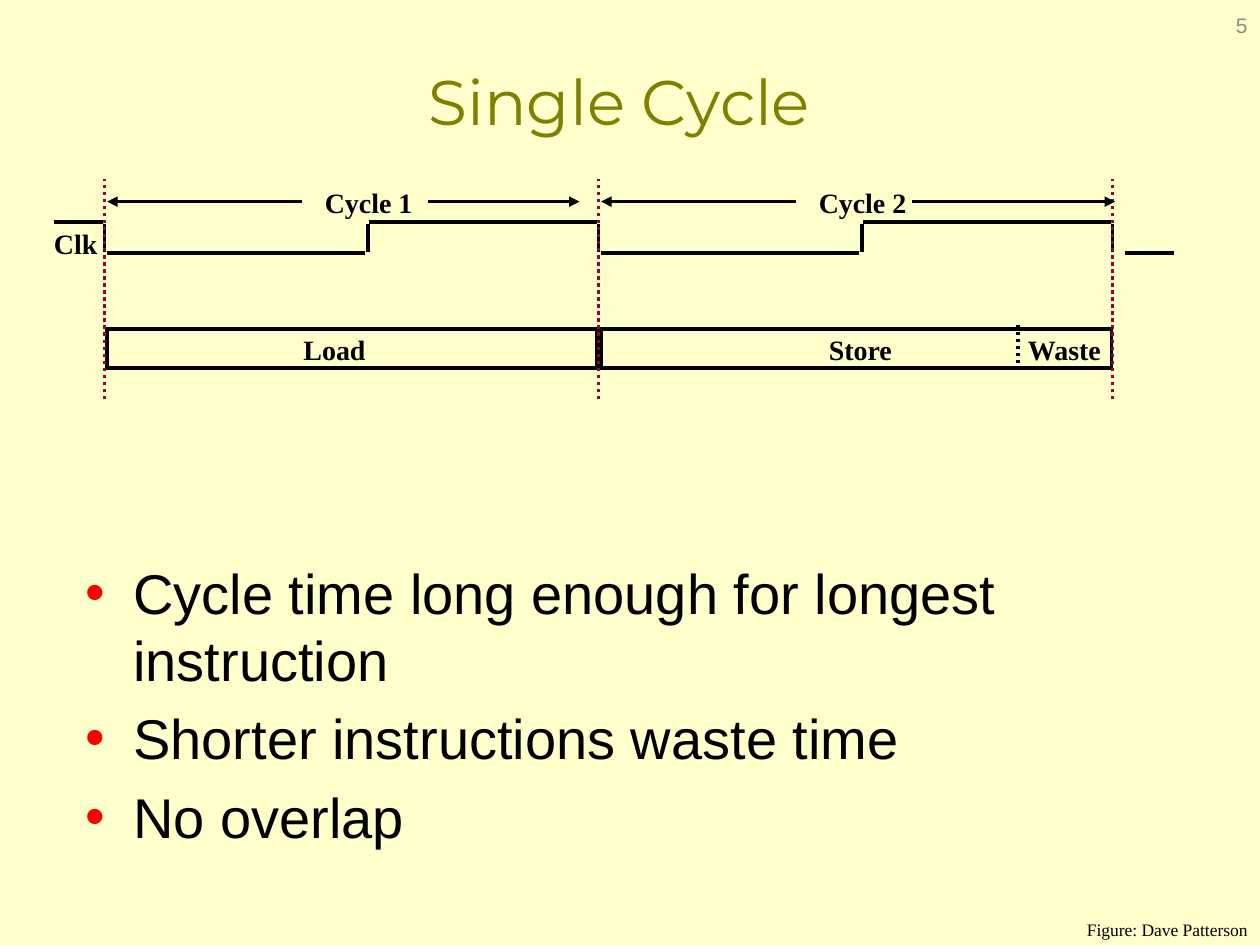
from lxml.etree import SubElement
from pptx import Presentation
from pptx.dml.color import RGBColor
from pptx.enum.dml import MSO_LINE_DASH_STYLE as Dash
from pptx.enum.shapes import MSO_CONNECTOR as Connector, MSO_SHAPE as Shape
from pptx.enum.text import MSO_ANCHOR as Anchor, MSO_AUTO_SIZE as AutoSize, PP_ALIGN as Align
from pptx.oxml.ns import qn
from pptx.util import Inches, Pt

CREAM = RGBColor(0xFF, 0xFF, 0xCC)
OLIVE = RGBColor(0x80, 0x80, 0x00)
MAROON = RGBColor(0x99, 0x00, 0x33)
BLACK = RGBColor(0, 0, 0)
GRAY = RGBColor(0x8C, 0x8C, 0x8C)

EDGES = (0.83, 4.75, 8.83)
HALF = 2.09
GAP = 0.02
ROWS = {"top": 1.42, "arrow": 1.6, "high": 1.76, "low": 2.01, "bar": 2.61, "foot": 3.17}
BAR_HEIGHT = 0.31
LABEL = {"size": Pt(16), "name": "Times New Roman", "bold": True}
POINTS = (
    "Cycle time long enough for longest instruction",
    "Shorter instructions waste time",
    "No overlap",
)


def apply_format(target, values):
    """Set every named attribute on the target."""
    for name, value in values.items():
        setattr(target, name, value)


def write(para, text, color, font):
    """Add one formatted span to a paragraph."""
    span = para.add_run()
    span.text = text
    apply_format(span.font, font)
    span.font.color.rgb = color


def add_text(page, area, text, font, color=BLACK, wrap=False, **layout):
    """Add a text box with one formatted paragraph."""
    box = page.shapes.add_textbox(*map(Inches, area))
    box.text_frame.word_wrap = wrap
    para = box.text_frame.paragraphs[0]
    apply_format(para, layout)
    write(para, text, color, font)


def add_label(page, left, top, width, text):
    """Add a bold diagram label."""
    add_text(page, (left, top, width, 0.36), text, LABEL)


def add_line(page, start, end, color=BLACK, dotted=False, head=False):
    """Draw a straight line, optionally dotted or with an arrowhead at its start."""
    line = page.shapes.add_connector(Connector.STRAIGHT, *map(Inches, start + end))
    line.line.color.rgb = color
    line.line.width = Pt(2)
    if dotted:
        line.line.dash_style = Dash.ROUND_DOT
    if head:
        SubElement(line.line._get_or_add_ln(), qn("a:headEnd"), type="triangle")
    SubElement(line._element.spPr, qn("a:effectLst"))


def add_clock(page):
    """Draw the clock wave with its lead-in and lead-out."""
    high, low = ROWS["high"], ROWS["low"]
    add_line(page, (0.43, high), (0.82, high))
    add_line(page, (8.93, low), (9.32, low))
    for start, end in zip(EDGES, EDGES[1:]):
        middle = start + HALF
        add_line(page, (start + GAP, low), (middle - GAP, low))
        add_line(page, (middle + GAP / 2, high), (end - GAP / 2, high))
    for x in (*EDGES, *(edge + HALF for edge in EDGES[:2])):
        add_line(page, (x, high + GAP), (x, low - GAP / 2))
    add_label(page, 0.33, 1.75, 0.62, "Clk")


def add_cycle(page, number, tail, tip):
    """Draw one cycle's name between its two arrows."""
    start, row = EDGES[number - 1], ROWS["arrow"]
    add_line(page, (start + GAP, row), (start + 1.57, row), head=True)
    add_line(page, (tip, row), (tail, row), head=True)
    add_label(page, start + 1.65, ROWS["top"], 0.9, f"Cycle {number}")


def add_bar(page, start, end):
    """Draw an outlined instruction bar between two cycle edges."""
    left = start + GAP
    area = (left, ROWS["bar"], end - GAP / 2 - left, BAR_HEIGHT)
    bar = page.shapes.add_shape(Shape.RECTANGLE, *map(Inches, area))
    bar.shadow.inherit = False
    bar.fill.background()
    bar.line.color.rgb = BLACK
    bar.line.width = Pt(2)


def add_bullets(page, area, points):
    """Add a text box with red bullets and hanging indents."""
    box = page.shapes.add_textbox(*map(Inches, area))
    frame = box.text_frame
    frame.word_wrap = True
    for index, point in enumerate(points):
        para = frame.add_paragraph() if index else frame.paragraphs[0]
        write(para, point, BLACK, {"size": Pt(32), "name": "Arial"})
        props = para._p.get_or_add_pPr()
        props.set("marL", str(Inches(0.38)))
        props.set("indent", str(-Inches(0.38)))
        SubElement(SubElement(props, qn("a:spcBef")), qn("a:spcPct"), val="20000")
        SubElement(SubElement(props, qn("a:buClr")), qn("a:srgbClr"), val="FF0000")
        SubElement(props, qn("a:buFont"), typeface="Arial")
        SubElement(props, qn("a:buChar"), char="•")


def set_title(page, text):
    """Place and format the title placeholder."""
    title = page.shapes.title
    apply_format(title, dict(zip(("left", "top", "width", "height"), map(Inches, (0.58, 0.17, 8.67, 1.25)))))
    frame = title.text_frame
    apply_format(frame, {"vertical_anchor": Anchor.MIDDLE, "auto_size": AutoSize.NONE})
    frame.paragraphs[0].alignment = Align.CENTER
    write(frame.paragraphs[0], text, OLIVE, {"size": Pt(36), "name": "Montserrat"})


def main():
    """Build and save the slide."""
    deck = Presentation()
    apply_format(deck, {"slide_width": Inches(10), "slide_height": Inches(7.5)})
    page = deck.slides.add_slide(deck.slide_layouts[5])
    page.background.fill.solid()
    page.background.fill.fore_color.rgb = CREAM

    set_title(page, "Single Cycle")
    add_bullets(page, (0.58, 4.38, 8.67, 2.79), POINTS)
    add_clock(page)
    for start, end in zip(EDGES, EDGES[1:]):
        add_bar(page, start, end)
    for edge in EDGES:
        add_line(page, (edge, ROWS["foot"]), (edge, ROWS["top"]), MAROON, dotted=True)
    for left, width, text in ((2.31, 0.72, "Load"), (6.48, 0.73, "Store"), (8.06, 0.82, "Waste")):
        add_label(page, left, ROWS["bar"] - GAP, width, text)
    add_line(page, (8.08, 2.94), (8.08, 2.58), dotted=True)
    add_cycle(page, 1, 3.4, 4.6)
    add_cycle(page, 2, 7.24, 8.85)

    add_text(page, (8.52, 7.33, 1.48, 0.17), "Figure: Dave Patterson",
             {"size": Pt(10), "name": "Times New Roman"}, alignment=Align.RIGHT, line_spacing=0.4)
    add_text(page, (7.67, 0.05, 2.33, 0.3), "5", {"size": Pt(12), "name": "Arial"},
             GRAY, wrap=True, alignment=Align.RIGHT)
    deck.save("out.pptx")


if __name__ == "__main__":
    main()
